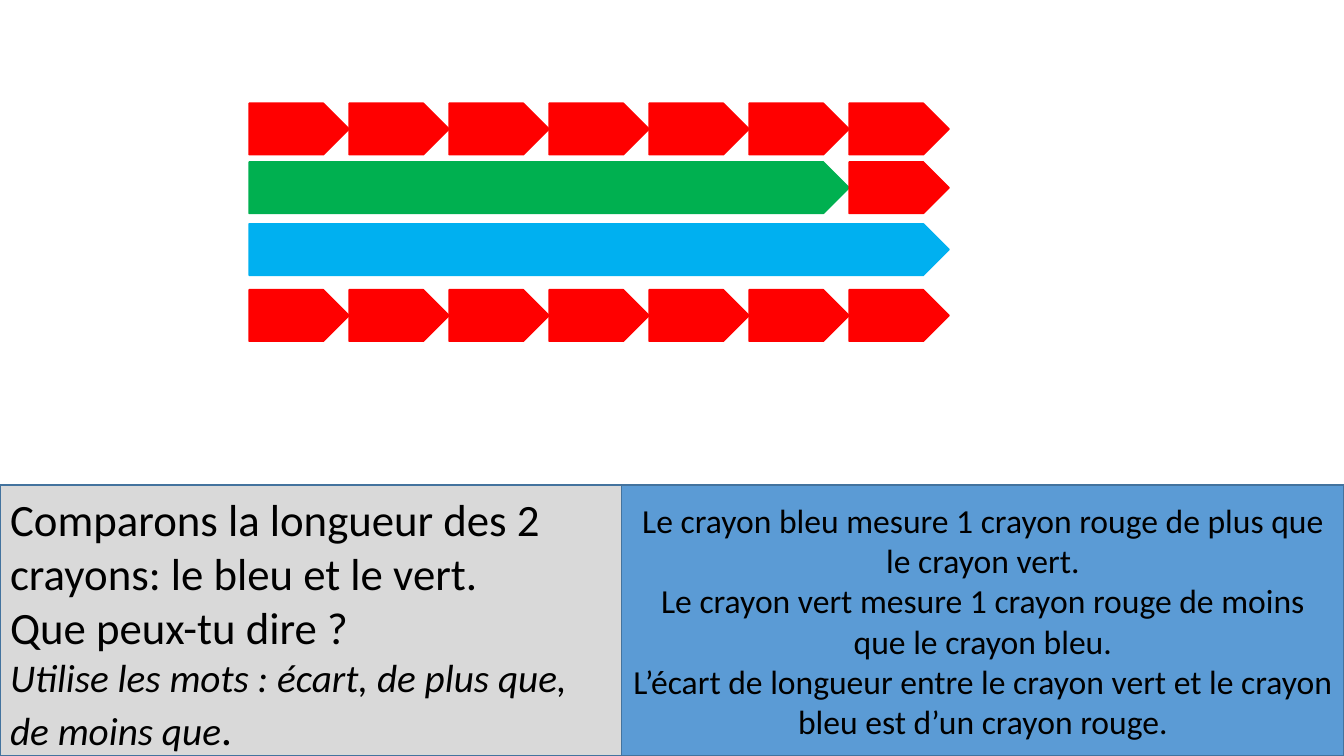
"""Build a slide comparing the lengths of a blue and a green pencil, measured in red pencils."""
from dataclasses import dataclass

from pptx import Presentation
from pptx.dml.color import RGBColor
from pptx.enum.shapes import MSO_SHAPE as Shape
from pptx.enum.text import MSO_ANCHOR as Anchor, MSO_AUTO_SIZE as AutoSize, PP_ALIGN as Align
from pptx.util import Cm, Pt

QUESTION = [
    [("Comparons la longueur des 2 crayons: le bleu et le vert.", "question")],
    [("Que peux-tu dire ?", "question")],
    [("Utilise les mots : écart, de plus que, de moins que", "hint"), (".", "question")],
]
ANSWER = [
    [("Le crayon bleu mesure 1 crayon rouge de plus que le crayon vert.", "answer")],
    [("Le crayon vert mesure 1 crayon rouge de moins que le crayon bleu.", "answer")],
    [("L’écart de longueur entre le crayon vert et le crayon bleu est d’un crayon rouge.", "answer")],
]
PENCIL_ROWS = [
    (2.6, [("red", 1)] * 7),
    (4.08, [("green", 6), ("red", 1)]),
    (5.64, [("blue", 7)]),
    (7.3, [("red", 1)] * 7),
]


@dataclass(frozen=True)
class Theme:
    """Colours, font and type formats of the slide."""
    red: str = "FF0000"
    green: str = "00B050"
    blue: str = "00B0F0"
    band: str = "D9D9D9"
    panel: str = "5B9BD5"
    border: str = "43739E"
    text: str = "000000"
    font: str = "Calibri"
    question: tuple = (32, False)
    hint: tuple = (28, True)
    answer: tuple = (24, False)


THEME = Theme()
SLIDE_W, SLIDE_H = 33.87, 19.05
BAND_TOP, SPLIT = 12.22, 15.67
PENCIL_LEFT, UNIT, PENCIL_H = 6.28, 2.52, 1.3


def add_block(s, kind, box, fill, line):
    """Add a filled, outlined shape; box is in centimetres."""
    sp = s.shapes.add_shape(kind, *map(Cm, box))
    sp.shadow.inherit = False
    sp.fill.solid()
    sp.fill.fore_color.rgb = RGBColor.from_string(fill)
    sp.line.color.rgb = RGBColor.from_string(line)
    sp.line.width = Pt(1)
    return sp


def write(sp, paragraphs, align, anchor):
    """Fill a shape with paragraphs of (text, style) runs."""
    tf = sp.text_frame
    frame_format = {"word_wrap": True, "auto_size": AutoSize.NONE, "vertical_anchor": anchor}
    for name, value in frame_format.items():
        setattr(tf, name, value)
    for i, runs in enumerate(paragraphs):
        p = tf.add_paragraph() if i else tf.paragraphs[0]
        p.alignment = align
        for text, style in runs:
            r = p.add_run()
            r.text = text
            size, italic = getattr(THEME, style)
            run_format = {"name": THEME.font, "size": Pt(size), "italic": italic}
            for name, value in run_format.items():
                setattr(r.font, name, value)
            r.font.color.rgb = RGBColor.from_string(THEME.text)


def add_pencils(s):
    """Lay each row of pencils end to end, with lengths in red pencils."""
    for top, pencils in PENCIL_ROWS:
        left = PENCIL_LEFT
        for colour, units in pencils:
            fill = getattr(THEME, colour)
            add_block(s, Shape.PENTAGON, (left, top, units * UNIT, PENCIL_H), fill, fill)
            left += units * UNIT


def main():
    """Create and save the presentation."""
    prs = Presentation()
    prs.slide_width, prs.slide_height = Cm(SLIDE_W), Cm(SLIDE_H)
    s = prs.slides.add_slide(prs.slide_layouts.get_by_name("Title Only"))

    band_h = SLIDE_H - BAND_TOP
    band = add_block(s, Shape.RECTANGLE, (0, BAND_TOP, SLIDE_W, band_h), THEME.band, THEME.border)
    title = s.shapes.title
    title.element.addprevious(band.element)
    title_box = {"left": 0, "top": 12.27, "width": SPLIT, "height": band_h}
    for name, value in title_box.items():
        setattr(title, name, Cm(value))
    write(title, QUESTION, Align.LEFT, Anchor.TOP)

    panel_box = (SPLIT, BAND_TOP, SLIDE_W - SPLIT, band_h)
    panel = add_block(s, Shape.RECTANGLE, panel_box, THEME.panel, THEME.border)
    write(panel, ANSWER, Align.CENTER, Anchor.MIDDLE)
    add_pencils(s)
    prs.save("out.pptx")


if __name__ == "__main__":
    main()
